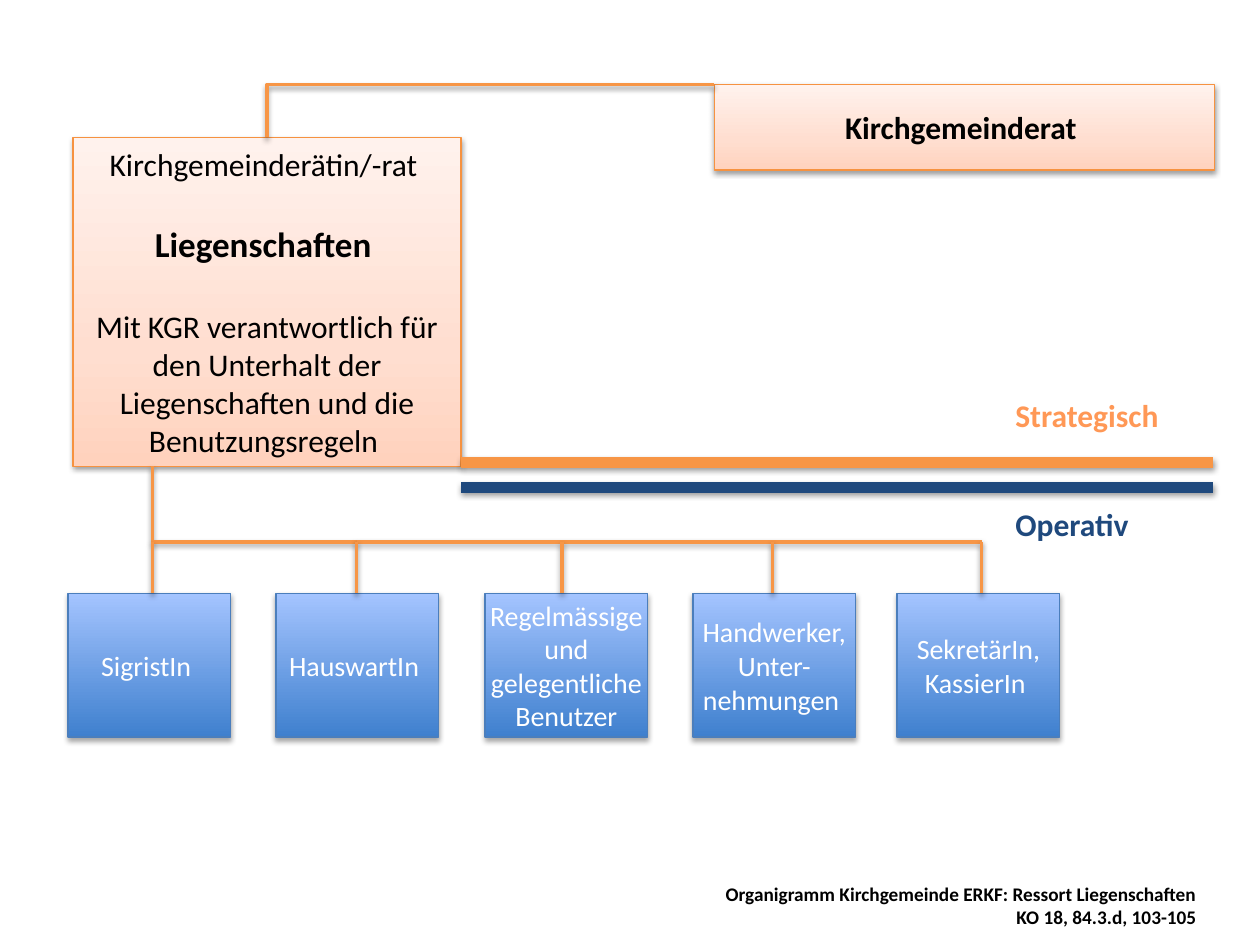
from lxml.etree import SubElement
from pptx import Presentation
from pptx.dml.color import RGBColor
from pptx.enum.shapes import MSO_CONNECTOR, MSO_SHAPE
from pptx.enum.text import MSO_ANCHOR, MSO_AUTO_SIZE, PP_ALIGN
from pptx.oxml.ns import qn
from pptx.util import Inches, Pt

FONT = "Calibri"
BLACK = RGBColor(0x00, 0x00, 0x00)
WHITE = RGBColor(0xFF, 0xFF, 0xFF)
ORANGE = RGBColor(0xF7, 0x96, 0x46)
ORANGE_TEXT = RGBColor(0xFF, 0x98, 0x56)
ORANGE_EDGE = RGBColor(0xF6, 0x92, 0x40)
NAVY = RGBColor(0x1F, 0x49, 0x7D)
BLUE_EDGE = RGBColor(0x4B, 0x7E, 0xBC)
# Gradient stops run from the bottom edge to the top: percent, colour
PEACH = [(0, RGBColor(0xFF, 0xD2, 0xBD)), (35, RGBColor(0xFF, 0xDE, 0xD0)),
         (100, RGBColor(0xFF, 0xF2, 0xED))]
BLUE = [(0, RGBColor(0x3F, 0x80, 0xCE)), (100, RGBColor(0xA4, 0xC4, 0xFF))]
# Shadow: opacity percent, blur and distance in points
SOFT_SHADOW = (38, 3.1, 1.6)
ROLE_SHADOW = (35, 3.1, 1.8)

# Left, top, width, height in inches
DEPARTMENT = (0.58, 1.09, 3.08, 2.61)
COUNCIL = (5.67, 0.67, 3.97, 0.68)

# Text lines, left, top, width, height, size, bold, colour, alignment
LABELS = [
    (["Liegenschaften "], 0.58, 1.72, 3.08, 0.44, 20, True, BLACK, PP_ALIGN.CENTER),
    (["Kirchgemeinderätin/-rat "], 0.58, 1.1, 3.08, 0.4, 18, False, BLACK, PP_ALIGN.CENTER),
    (["Mit KGR verantwortlich für den Unterhalt der Liegenschaften und die Benutzungsregeln "],
     0.58, 2.39, 3.08, 1.31, 18, False, BLACK, PP_ALIGN.CENTER),
    (["Kirchgemeinderat "], 5.67, 0.81, 3.97, 0.4, 18, True, BLACK, PP_ALIGN.CENTER),
    (["Strategisch"], 7.96, 3.09, 1.62, 0.4, 18, True, ORANGE_TEXT, PP_ALIGN.LEFT),
    (["Operativ"], 7.96, 3.96, 1.68, 0.4, 18, True, NAVY, PP_ALIGN.LEFT),
    (["Organigramm Kirchgemeinde ERKF: Ressort Liegenschaften ", "KO 18, 84.3.d, 103-105 "],
     2.31, 6.95, 7.32, 0.47, 11, True, BLACK, PP_ALIGN.RIGHT),
]

# Role, left edge of its box, x of the line that drops to it
ROLES = [
    ("SigristIn ", 0.54, 1.21),
    ("HauswartIn ", 2.19, 2.83),
    ("Regelmässige und gelegentliche Benutzer", 3.85, 4.46),
    ("Handwerker, Unter-nehmungen ", 5.5, 6.13),
    ("SekretärIn, KassierIn ", 7.12, 7.79),
]
ROLE_TOP, ROLE_WIDTH, ROLE_HEIGHT = 4.71, 1.29, 1.14
BRANCH_Y = 4.3

# The two levels: y, colour
LEVELS = [(3.67, ORANGE), (3.87, NAVY)]
LEVEL_RIGHT = 9.63


def set_shadow(effects, opacity, blur, distance):
    shadow = SubElement(effects, qn("a:outerShdw"), blurRad=str(Pt(blur)),
                        dist=str(Pt(distance)), dir="5400000", rotWithShape="0")
    colour = SubElement(shadow, qn("a:srgbClr"), val="000000")
    SubElement(colour, qn("a:alpha"), val=str(opacity * 1000))


def add_box(slide, preset, place, stops, edge, shadow):
    box = slide.shapes.add_shape(preset, *map(Inches, place))
    box.fill.gradient()
    box.fill.gradient_angle = 90
    properties = box._element.spPr
    stop_list = properties.find(".//" + qn("a:gsLst"))
    for default_stop in list(stop_list):
        stop_list.remove(default_stop)
    for percent, colour in stops:
        stop = SubElement(stop_list, qn("a:gs"), pos=str(percent * 1000))
        SubElement(stop, qn("a:srgbClr"), val=str(colour))
    box.line.color.rgb = edge
    box.line.width = Pt(0.75)
    box.shadow.inherit = False
    set_shadow(properties.find(qn("a:effectLst")), *shadow)
    return box


def add_line(slide, start, end, colour=ORANGE, width=2, kind=MSO_CONNECTOR.STRAIGHT):
    line = slide.shapes.add_connector(kind, *map(Inches, start + end))
    line.line.color.rgb = colour
    line.line.width = Pt(width)
    set_shadow(SubElement(line._element.spPr, qn("a:effectLst")), *SOFT_SHADOW)
    return line


def write(frame, lines, size, bold, colour, align):
    frame.word_wrap = True
    for number, text in enumerate(lines):
        paragraph = frame.add_paragraph() if number else frame.paragraphs[0]
        paragraph.alignment = align
        run = paragraph.add_run()
        run.text = text
        run.font.name = FONT
        run.font.size = Pt(size)
        run.font.bold = bold
        run.font.color.rgb = colour


def main():
    deck = Presentation()
    deck.slide_width, deck.slide_height = Inches(10), Inches(7.5)
    slide = deck.slides.add_slide(deck.slide_layouts[6])

    add_box(slide, MSO_SHAPE.FLOWCHART_PROCESS, DEPARTMENT, PEACH, ORANGE_EDGE, SOFT_SHADOW)
    add_box(slide, MSO_SHAPE.RECTANGLE, COUNCIL, PEACH, ORANGE_EDGE, SOFT_SHADOW)
    for role, left, _ in ROLES:
        box = add_box(slide, MSO_SHAPE.RECTANGLE, (left, ROLE_TOP, ROLE_WIDTH, ROLE_HEIGHT),
                      BLUE, BLUE_EDGE, ROLE_SHADOW)
        frame = box.text_frame
        frame.margin_left = frame.margin_right = Inches(0.02)
        frame.vertical_anchor = MSO_ANCHOR.MIDDLE
        write(frame, [role], 16, False, WHITE, PP_ALIGN.CENTER)

    left, top, width, height = DEPARTMENT
    council_link = add_line(slide, COUNCIL[:2], (left + width / 2, top),
                            kind=MSO_CONNECTOR.ELBOW)
    council_link._element.spPr.find(qn("a:prstGeom")).set("prst", "bentConnector2")

    drops = [x for _, _, x in ROLES]
    trunk = add_line(slide, (drops[0], top + height), (drops[1], BRANCH_Y),
                     kind=MSO_CONNECTOR.ELBOW)
    # The trunk goes down first, then across
    adjustments = trunk._element.spPr.find(".//" + qn("a:avLst"))
    SubElement(adjustments, qn("a:gd"), name="adj1", fmla="val 0")
    add_line(slide, (drops[1], BRANCH_Y), (drops[-1], BRANCH_Y))
    for x in drops:
        add_line(slide, (x, BRANCH_Y), (x, ROLE_TOP))

    for y, colour in LEVELS:
        add_line(slide, (left + width, y), (LEVEL_RIGHT, y), colour, 6)

    for lines, x, y, w, h, size, bold, colour, align in LABELS:
        frame = slide.shapes.add_textbox(*map(Inches, (x, y, w, h))).text_frame
        frame.auto_size = MSO_AUTO_SIZE.SHAPE_TO_FIT_TEXT
        write(frame, lines, size, bold, colour, align)

    deck.save("out.pptx")


if __name__ == "__main__":
    main()
